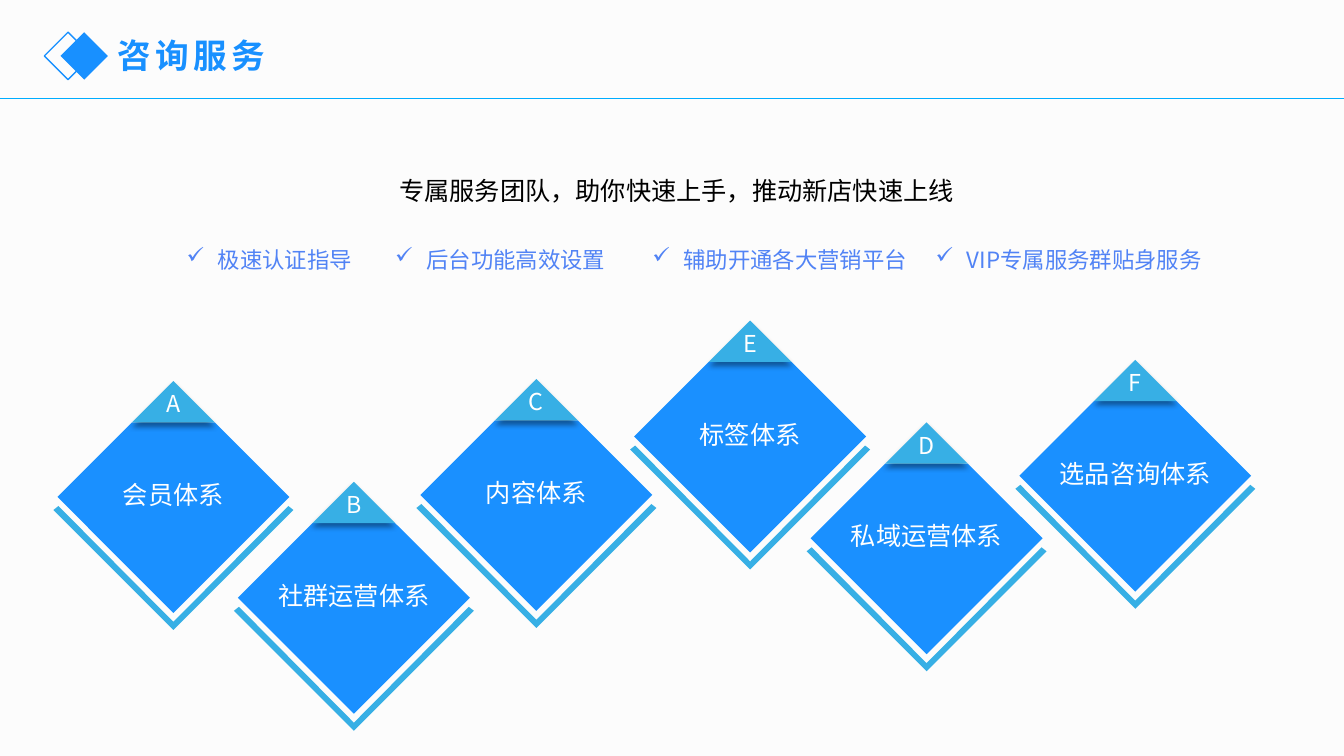
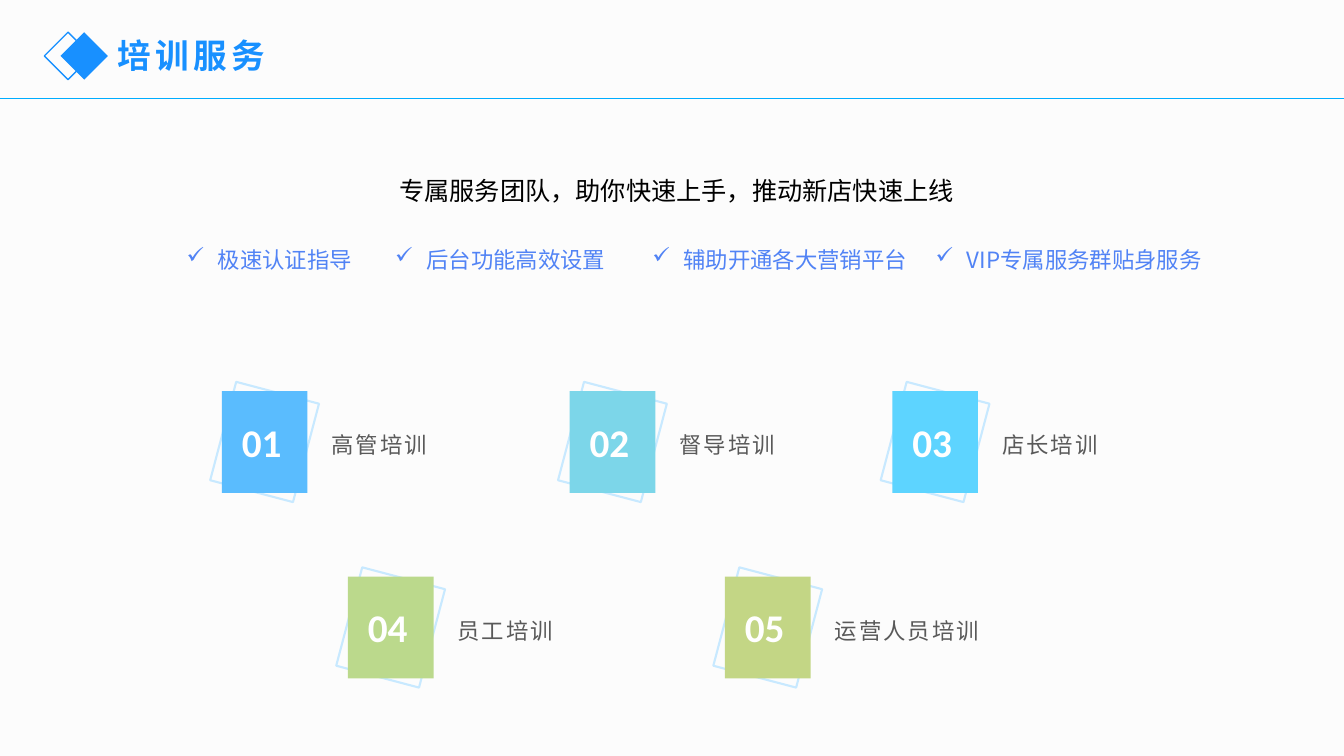
import pptx
import pptx.util
import pptx.dml.color
import pptx.enum.shapes
import pptx.enum.text
import pptx.oxml
import pptx.oxml.ns
from lxml import etree

Inches, Pt = pptx.util.Inches, pptx.util.Pt
SHAPE = pptx.enum.shapes.MSO_SHAPE
ALIGN = pptx.enum.text.PP_ALIGN
ANCHOR = pptx.enum.text.MSO_ANCHOR
qn = pptx.oxml.ns.qn

FONT = "Noto Sans CJK SC"
PAPER, WHITE, BLACK, GREY = "FCFCFC", "FFFFFF", "000000", "595959"
BLUE, RULE, POINT = "1890FF", "00ADFF", "5183F5"
BODY, TRIM, FRAME = "1A90FF", "37AFE5", "C8E9FF"

SLOGAN = "专属服务团队，助你快速上手，推动新店快速上线"
POINTS = [
    (1.83, 1.98, "极速认证指导"),
    (3.9, 2.4, "后台功能高效设置"),
    (6.45, 2.75, "辅助开通各大营销平台"),
    (9.26, 2.75, "VIP专属服务群贴身服务"),
]
# Centre and top of each diamond, letter, label
SYSTEMS = [
    (1.72, 3.78, "A", "会员体系"),
    (3.51, 4.78, "B", "社群运营体系"),
    (5.32, 3.76, "C", "内容体系"),
    (9.19, 4.19, "D", "私域运营体系"),
    (7.44, 3.18, "E", "标签体系"),
    (11.26, 3.57, "F", "选品咨询体系"),
]
# Left and top of each card, fill, label
COURSES = [
    (2.2, 3.88, "5ABCFE", "高管培训"),
    (5.65, 3.88, "7CD6E9", "督导培训"),
    (8.85, 3.88, "5DD4FF", "店长培训"),
    (3.45, 5.72, "BBD98C", "员工培训"),
    (7.19, 5.72, "C3D685", "运营人员培训"),
]

# Outlines measured from the top corner of a diamond
TIP, HALF = 0.41, 1.15
TIP_PTS = [(0, 0), (TIP, TIP), (-TIP, TIP)]
BODY_PTS = [(-TIP, TIP), (TIP, TIP), (HALF, HALF), (0, 2 * HALF), (-HALF, HALF)]
RIM_PTS = [(-1.19, 1.28), (-1.14, 1.24), (0, 2.39),
           (1.14, 1.24), (1.19, 1.28), (0, 2.47)]


def rgb(code):
    return pptx.dml.color.RGBColor.from_string(code)


def paint(shape, fill=None, line=None, width=1):
    """Give a shape a flat fill and line, or none, and no shadow."""
    shape.shadow.inherit = False
    if fill:
        shape.fill.solid()
        shape.fill.fore_color.rgb = rgb(fill)
    else:
        shape.fill.background()
    if line:
        shape.line.color.rgb = rgb(line)
        shape.line.width = Pt(width)
    else:
        shape.line.fill.background()
    return shape


def write(shape, words, size, color, align=ALIGN.LEFT, anchor=ANCHOR.TOP,
          font=FONT, bold=False, track=0, inset=(0.1, 0.05, 0.1, 0.05), wrap=True):
    """Put one styled paragraph in a shape and return the paragraph."""
    frame = shape.text_frame
    frame.word_wrap, frame.vertical_anchor = wrap, anchor
    (frame.margin_left, frame.margin_top,
     frame.margin_right, frame.margin_bottom) = map(Inches, inset)
    para = frame.paragraphs[0]
    para.text, para.alignment = words, align
    run = para.runs[0]
    run.font.name, run.font.size, run.font.bold = font, Pt(size), bold
    run.font.color.rgb = rgb(color)
    props = run.font._element
    etree.SubElement(props, qn("a:ea")).set("typeface", font)
    if track:
        props.set("spc", str(int(track * 100)))
    return para


def block(slide, kind, x, y, w, h, **look):
    return paint(slide.shapes.add_shape(kind, *map(Inches, (x, y, w, h))), **look)


def label(slide, x, y, w, h, *args, **style):
    """Add a text box and return it with its paragraph."""
    box = slide.shapes.add_textbox(*map(Inches, (x, y, w, h)))
    return box, write(box, *args, **style)


def outline(slide, x, y, points, fill):
    """Draw a closed polygon whose points are offsets from x, y."""
    pts = [(Inches(x + dx), Inches(y + dy)) for dx, dy in points]
    pen = slide.shapes.build_freeform(*pts[0])
    pen.add_line_segments(pts[1:], close=True)
    return paint(pen.convert_to_shape(), fill)


def shade(shape):
    """Cast a soft shadow straight down."""
    effects = shape._element.spPr.find(qn("a:effectLst"))
    cast = etree.SubElement(effects, qn("a:outerShdw"), blurRad=str(Pt(4)),
                            dist=str(Pt(3)), dir="5400000", algn="t", rotWithShape="0")
    tone = etree.SubElement(cast, qn("a:srgbClr"), val=BLACK)
    etree.SubElement(tone, qn("a:alpha"), val="40000")


def header(slide, title):
    rule = slide.shapes.add_connector(pptx.enum.shapes.MSO_CONNECTOR.STRAIGHT,
                                      0, Inches(0.98), Inches(13.33), Inches(0.98))
    rule.line.color.rgb, rule.line.width = rgb(RULE), Pt(1)
    etree.SubElement(rule._element.spPr, qn("a:effectLst"))
    block(slide, SHAPE.DIAMOND, 0.44, 0.32, 0.47, 0.47, line=BLUE)
    block(slide, SHAPE.DIAMOND, 0.6, 0.32, 0.47, 0.47, fill=BLUE)
    label(slide, 1.07, 0.3, 6, 0.6, title, 24, BLUE, bold=True, track=3)


def pitch(slide):
    """Place the slogan and the row of ticked points."""
    label(slide, 2.03, 1.69, 9.36, 0.46, SLOGAN, 18, BLACK, align=ALIGN.CENTER)
    for x, w, words in POINTS:
        para = label(slide, x, 2.42, w, 0.34, words, 16, POINT,
                     inset=(0, 0.02, 0, 0))[1]
        props = para._p.get_or_add_pPr()
        props.set("marL", str(Inches(0.33)))
        props.set("indent", str(Inches(-0.31)))
        etree.SubElement(props, qn("a:buChar")).set("char", "✓")


def system(slide, x, y, letter, name):
    """Draw a lettered diamond with its top corner at x, y."""
    rim = outline(slide, x, y, RIM_PTS, TRIM)
    body = outline(slide, x, y, BODY_PTS, BODY)
    tip = outline(slide, x, y, TIP_PTS, TRIM)
    shade(tip)
    write(body, name, 18, WHITE, ALIGN.CENTER, ANCHOR.MIDDLE,
          inset=(0.1, 0.05, 0.1, 0.51))
    write(tip, letter, 16.6, WHITE, ALIGN.CENTER, ANCHOR.BOTTOM,
          inset=(0.1, 0.08, 0.1, 0.05))
    slide.shapes.add_group_shape([rim, body, tip])


def course(slide, x, y, number, fill, name):
    """Draw a numbered card with its top left corner at x, y."""
    frame = block(slide, SHAPE.RECTANGLE, x, y, 0.85, 1.01, line=FRAME, width=1.5)
    frame.rotation = 14.8
    card = block(slide, SHAPE.RECTANGLE, x, y, 0.85, 1.01, fill=fill)
    count = label(slide, x + 0.1, y + 0.22, 0.64, 0.57, f"{number:02}", 28, WHITE,
                  font="Calibri", bold=True, wrap=False)[0]
    text, para = label(slide, x + 0.99, y - 0.05, 1.9, 1.11, name, 16, GREY,
                       anchor=ANCHOR.MIDDLE, track=1.5)
    para.line_spacing = 1.2
    slide.shapes.add_group_shape([frame, card, count, text])


def page(deck, title):
    slide = deck.slides.add_slide(deck.slide_layouts[6])
    header(slide, title)
    pitch(slide)
    return slide


def main():
    deck = pptx.Presentation()
    deck.slide_width, deck.slide_height = Inches(13.33), Inches(7.5)
    back = deck.slide_master.background.fill
    back.solid()
    back.fore_color.rgb = rgb(PAPER)

    advice = page(deck, "咨询服务")
    for item in SYSTEMS:
        system(advice, *item)

    training = page(deck, "培训服务")
    for number, (x, y, fill, name) in enumerate(COURSES, 1):
        course(training, x, y, number, fill, name)

    deck.save("out.pptx")


if __name__ == "__main__":
    main()
